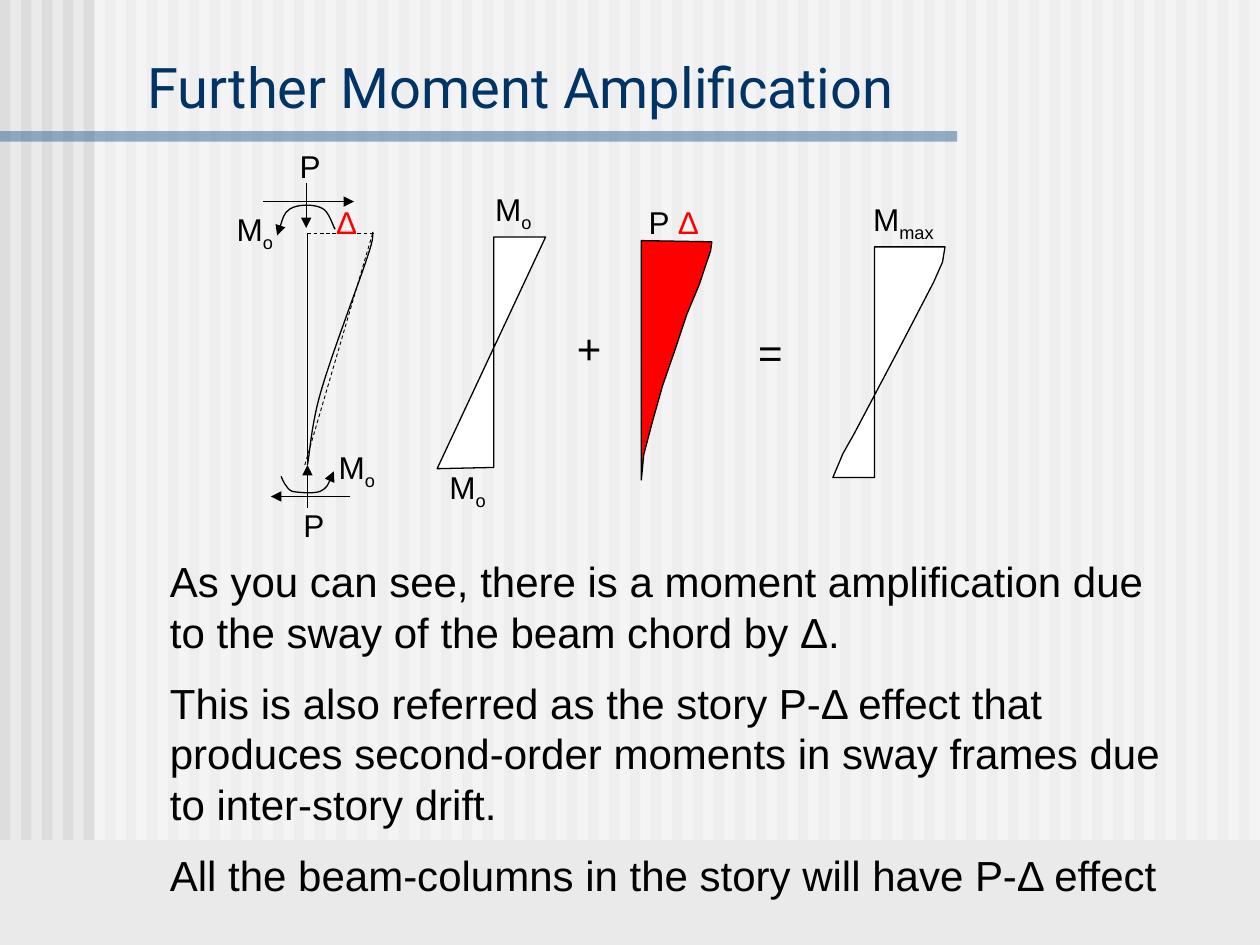
"""Build a slide on moment amplification from storey sway."""
from pptx import Presentation
from pptx.dml.color import RGBColor
from pptx.enum.dml import MSO_LINE
from pptx.enum.shapes import MSO_CONNECTOR, MSO_SHAPE
from pptx.enum.text import MSO_ANCHOR, MSO_AUTO_SIZE, PP_ALIGN
from pptx.oxml.ns import qn
from pptx.oxml.xmlchemy import OxmlElement
from pptx.util import Pt

COLORS = {"background": "EAEAEA", "stripe": "DDDDDD", "white": "FFFFFF",
          "rule": "336699", "title": "003366", "ink": "000000", "red": "FF0000"}
TITLE = "Further Moment Amplification"
EXPLANATION = [
    "As you can see, there is a moment amplification due to the sway of the beam chord by Δ.",
    "This is also referred as the story P-Δ effect that produces second-order moments "
    "in sway frames due to inter-story drift.",
    "All the beam-columns in the story will have P-Δ effect",
]
STRIPE_COUNT, STRIPE_PITCH, STRIPE_WIDTH, STRIPE_HEIGHT = 60, 12, 6, 480

COLUMN = [(175.7, 133.9, 175.7, 265.7)]
FORCES = [
    (175.7, 290.2, 175.7, 265.7),
    (175, 104.4, 175, 130.3),
    (150.5, 115.2, 202.3, 115.2),
    (200.2, 283.7, 154.8, 283.7),
]
CHORDS = [(175.7, 133.2, 214.6, 133.2), (174.2, 265.7, 213.1, 132.8)]

END_MOMENTS = [
    [(191.5, 131), (190.1, 128.9), (187.9, 120.2), (183.6, 118.8), (179.3, 116.6),
     (169.9, 116.6), (165.6, 119.5), (162, 121.7), (159.8, 131), (158.4, 134.6)],
    [(160.6, 272.2), (161.3, 273.6), (163.4, 279.4), (167, 280.8), (170.6, 281.5),
     (179.3, 282.2), (182.9, 280.8), (187.2, 278.6), (188.6, 274.3), (190.8, 269.3)],
]
DEFLECTED_COLUMN = [
    (175.7, 265.7), (177.1, 259.2), (177.8, 242.6), (183.6, 223.2), (189.4, 203),
    (204.5, 163.4), (209.5, 148.3), (214.6, 133.2), (212.4, 136.1), (213.1, 132.5)]
MOMENT_DIAGRAMS = [
    ("white", [(282.2, 135.4), (282.2, 267.1), (249.8, 267.8), (311.8, 135.4)]),
    ("red", [(406.8, 138.2), (406.1, 143.3), (399.6, 162.7), (392.4, 180),
             (385.2, 201.6), (378.7, 220.3), (373, 240.5), (367.9, 259.9),
             (366.5, 274.3), (366.5, 137.5)]),
    ("white", [(499.7, 141.1), (499.7, 272.9), (475.9, 272.9), (481.7, 259.2),
               (488.2, 247.7), (514.8, 197.3), (533.5, 161.3), (538.6, 149.8),
               (540, 141.1)]),
]

INK, RED, SUBSCRIPT = ("ink", 0), ("red", 0), ("ink", -25000)
M_O = [("M", INK), ("o", SUBSCRIPT)]
P = [("P", INK)]
LABELS = [
    (M_O, 128.2, 116.6, 36, 18, False),
    (P, 164.2, 80.6, 26.6, 18, True),
    (M_O, 186.5, 252.7, 36, 18, False),
    (P, 166.3, 285.8, 26.6, 18, True),
    ([("Δ", RED)], 185, 112.3, 26.6, 18, True),
    (M_O, 275.8, 105.1, 36, 18, False),
    (M_O, 249.8, 264.2, 36, 18, False),
    ([("+", INK)], 322.6, 180.7, 28.8, 24, False),
    ([("P ", INK), ("Δ", RED)], 363.6, 112.3, 51.8, 18, True),
    ([("=", INK)], 426.2, 182.9, 28.8, 24, False),
    ([("M", INK), ("max", SUBSCRIPT)], 491.8, 110.9, 56.2, 18, True),
]


def rgb(name):
    return RGBColor.from_string(COLORS[name])


def add_band(slide, left, top, width, height, color, opacity=None):
    band = slide.shapes.add_shape(
        MSO_SHAPE.RECTANGLE, Pt(left), Pt(top), Pt(width), Pt(height))
    band.shadow.inherit = False
    band.line.fill.background()
    band.fill.solid()
    band.fill.fore_color.rgb = rgb(color)
    if opacity:
        alpha = OxmlElement("a:alpha")
        alpha.set("val", str(opacity * 1000))
        band.element.find(".//" + qn("a:srgbClr")).append(alpha)


def draw_outline(stroke, weight=0.75, dashed=False, arrow=False):
    stroke.line.color.rgb = rgb("ink")
    stroke.line.width = Pt(weight)
    if dashed:
        stroke.line.dash_style = MSO_LINE.DASH
    if arrow:
        arrowhead = OxmlElement("a:tailEnd")
        arrowhead.set("type", "triangle")
        stroke.element.find(".//" + qn("a:ln")).append(arrowhead)


def add_line(slide, ends, **outline):
    line = slide.shapes.add_connector(MSO_CONNECTOR.STRAIGHT, *map(Pt, ends))
    draw_outline(line, **outline)
    line.element.spPr.append(OxmlElement("a:effectLst"))


def add_outline(slide, points, closed, **outline):
    start, *rest = [(Pt(x), Pt(y)) for x, y in points]
    builder = slide.shapes.build_freeform(*start)
    builder.add_line_segments(rest, close=closed)
    figure = builder.convert_to_shape()
    figure.shadow.inherit = False
    draw_outline(figure, **outline)
    return figure


def add_curve(slide, points, **outline):
    curve = add_outline(slide, points, False, **outline)
    curve.fill.background()
    segments = list(curve.element.iter(qn("a:lnTo")))
    for first in range(0, len(segments), 3):
        bezier = OxmlElement("a:cubicBezTo")
        segments[first].addprevious(bezier)
        for segment in segments[first:first + 3]:
            bezier.append(segment[0])
            segment.getparent().remove(segment)


def format_run(run, size, color, font="Arial"):
    run.font.name = font
    run.font.size = Pt(size)
    run.font.color.rgb = rgb(color)


def add_text_area(slide, left, top, width, height, wrap=True):
    area = slide.shapes.add_textbox(Pt(left), Pt(top), Pt(width), Pt(height))
    area.text_frame.word_wrap = wrap
    area.text_frame.auto_size = MSO_AUTO_SIZE.SHAPE_TO_FIT_TEXT
    return area


def add_label(slide, parts, left, top, width, size, wrap):
    label = add_text_area(slide, left, top, width, size * 1.2 + 7.2, wrap)
    for text, (color, baseline) in parts:
        run = label.text_frame.paragraphs[0].add_run()
        run.text = text
        format_run(run, size, color)
        if baseline:
            label.element.findall(".//" + qn("a:rPr"))[-1].set("baseline", str(baseline))


def add_title(slide):
    title = slide.shapes.title
    title.left, title.top, title.width, title.height = map(Pt, (77, 0, 643, 72))
    title.text_frame.text = TITLE
    title.text_frame.vertical_anchor = MSO_ANCHOR.BOTTOM
    heading = title.text_frame.paragraphs[0]
    heading.alignment = PP_ALIGN.LEFT
    format_run(heading.runs[0], 32, "title", "Roboto")
    title.element.getparent().append(title.element)


def add_explanation(slide):
    frame = add_text_area(slide, 90, 314, 594, 211).text_frame
    frame.text = "\n".join(EXPLANATION)
    for paragraph in frame.paragraphs:
        paragraph.space_before = Pt(12)
        format_run(paragraph.runs[0], 24, "ink")


def main():
    deck = Presentation()
    deck.slide_width, deck.slide_height = Pt(720), Pt(540)
    slide = deck.slides.add_slide(deck.slide_layouts[5])
    slide.background.fill.solid()
    slide.background.fill.fore_color.rgb = rgb("background")
    for index in range(STRIPE_COUNT):
        add_band(slide, index * STRIPE_PITCH, 0, STRIPE_WIDTH, STRIPE_HEIGHT, "stripe")
    add_band(slide, 54, 0, 666, STRIPE_HEIGHT, "white", 50)
    add_band(slide, 0, 75, 547, 6, "rule", 50)
    add_title(slide)
    for ends in COLUMN:
        add_line(slide, ends)
    for ends in FORCES:
        add_line(slide, ends, arrow=True)
    for points in END_MOMENTS:
        add_curve(slide, points, arrow=True)
    add_curve(slide, DEFLECTED_COLUMN)
    for ends in CHORDS:
        add_line(slide, ends, weight=0.5, dashed=True)
    for color, points in MOMENT_DIAGRAMS:
        diagram = add_outline(slide, points, True)
        diagram.fill.solid()
        diagram.fill.fore_color.rgb = rgb(color)
    for label in LABELS:
        add_label(slide, *label)
    add_explanation(slide)
    deck.save("out.pptx")


if __name__ == "__main__":
    main()
